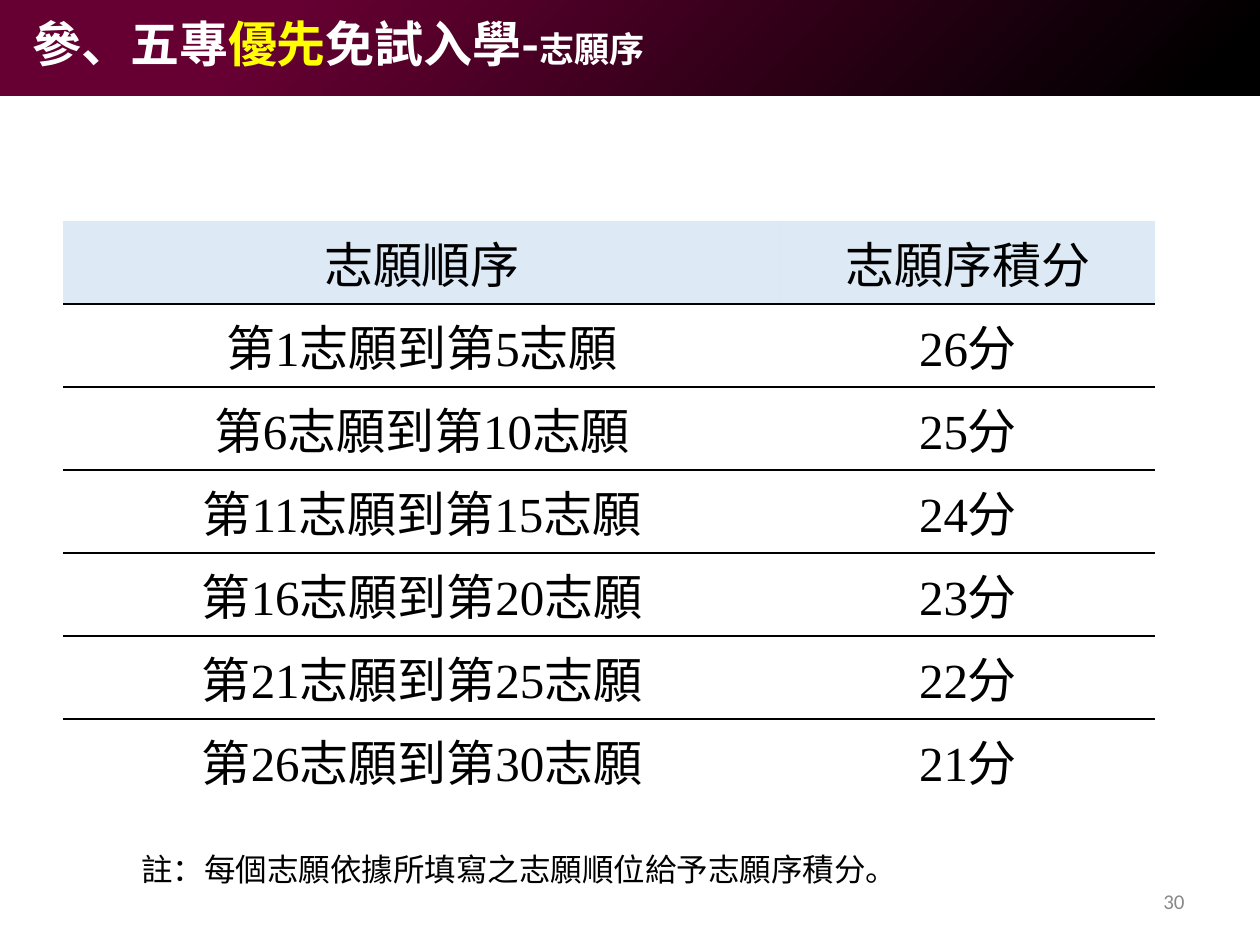
from lxml import etree
from pptx import Presentation
from pptx import util as u
from pptx.dml.color import RGBColor
from pptx.enum import shapes, text
from pptx.oxml import ns, parse_xml

PX = 914400 // 126
WHITE = RGBColor(0xFF, 0xFF, 0xFF)
YELLOW = RGBColor(0xFF, 0xFF, 0x00)
BLACK = RGBColor(0x00, 0x00, 0x00)
GREY = RGBColor(0x89, 0x89, 0x89)
PALE_BLUE = RGBColor(0xBD, 0xD7, 0xEE)
CJK = "Noto Sans CJK SC"
A = 'xmlns:a="http://schemas.openxmlformats.org/drawingml/2006/main"'


def style(r, size, color, name=CJK, bold=False):
    r.font.size, r.font.name, r.font.bold = u.Pt(size), name, bold
    r.font.color.rgb = color
    ea = etree.SubElement(r.font._element, ns.qn("a:ea"))
    ea.set("typeface", CJK)


def add_text(x, y, w, h, runs, align, anchor=text.MSO_ANCHOR.TOP, inset=6):
    tf = s.shapes.add_textbox(x * PX, y * PX, w * PX, h * PX).text_frame
    tf.word_wrap = True
    tf.vertical_anchor = anchor
    tf.margin_top = tf.margin_bottom = inset * PX
    p = tf.paragraphs[0]
    p.alignment = align
    for content, *look in runs:
        r = p.add_run()
        r.text = content
        style(r, *look)


prs = Presentation()
prs.slide_width, prs.slide_height = 1260 * PX, 945 * PX
s = prs.slides.add_slide(prs.slide_layouts[6])

# Header band with a three-stop diagonal gradient
band = s.shapes.add_shape(shapes.MSO_SHAPE.RECTANGLE, 0, 0, 1260 * PX, 96 * PX)
band.shadow.inherit = False
band.line.fill.background()
stops = "".join(
    f'<a:gs pos="{pos}000"><a:srgbClr val="{color}"/></a:gs>'
    for pos, color in [(5, "660032"), (22, "660032"), (95, "000000")])
band.fill.background()
no_fill = band._element.spPr.find(ns.qn("a:noFill"))
no_fill.getparent().replace(no_fill, parse_xml(
    f'<a:gradFill {A} rotWithShape="1"><a:gsLst>{stops}</a:gsLst>'
    '<a:lin ang="2700000" scaled="0"/></a:gradFill>'))

# Title
add_text(20, 13, 1135, 72, [
    ("參、五專", 28, WHITE, CJK, True),
    ("優先", 28, YELLOW, CJK, True),
    ("免試入學-", 28, WHITE, CJK, True),
    ("志願序", 20, WHITE, CJK, True),
], text.PP_ALIGN.LEFT, inset=0)

# Score table: six bands of five choices, one point less for each
rows = [("志願順序", "志願序積分")]
rows += [(f"第{5 * i + 1}志願到第{5 * i + 5}志願", f"{26 - i}分") for i in range(6)]
frame = s.shapes.add_table(len(rows), 2, 63 * PX, 221 * PX, 1092 * PX, 581 * PX)
table = frame.table
table.first_row = table.horz_banding = False
table._tbl.tblPr.find(ns.qn("a:tableStyleId")).text = "{2D5ABB26-0587-4C30-8999-92F81FD0307C}"
table.columns[0].width, table.columns[1].width = 718 * PX, 374 * PX

for i, row in enumerate(rows):
    table.rows[i].height = 83 * PX
    for j, content in enumerate(row):
        cell = table.cell(i, j)
        cell.vertical_anchor = text.MSO_ANCHOR.MIDDLE
        p = cell.text_frame.paragraphs[0]
        p.text = content
        p.alignment = text.PP_ALIGN.CENTER
        style(p.runs[0], 28, BLACK, "Times New Roman")
        tc_pr = cell._tc.get_or_add_tcPr()
        if i == 0:
            cell.fill.solid()
            cell.fill.fore_color.rgb = PALE_BLUE
            alpha = etree.SubElement(tc_pr.find(".//" + ns.qn("a:srgbClr")), ns.qn("a:alpha"))
            alpha.set("val", "50000")
        else:
            cell.fill.background()
        if i < len(rows) - 1:
            tc_pr.insert(0, parse_xml(
                f'<a:lnB {A} w="12700"><a:solidFill><a:srgbClr val="{BLACK}"/>'
                '</a:solidFill></a:lnB>'))

# Note and page number
add_text(129, 844, 1131, 58, [("註：每個志願依據所填寫之志願順位給予志願序積分。", 18, BLACK)],
         text.PP_ALIGN.LEFT)
add_text(903, 876, 294, 50, [("30", 12, GREY, "Calibri")],
         text.PP_ALIGN.RIGHT, text.MSO_ANCHOR.MIDDLE)

prs.save("out.pptx")
